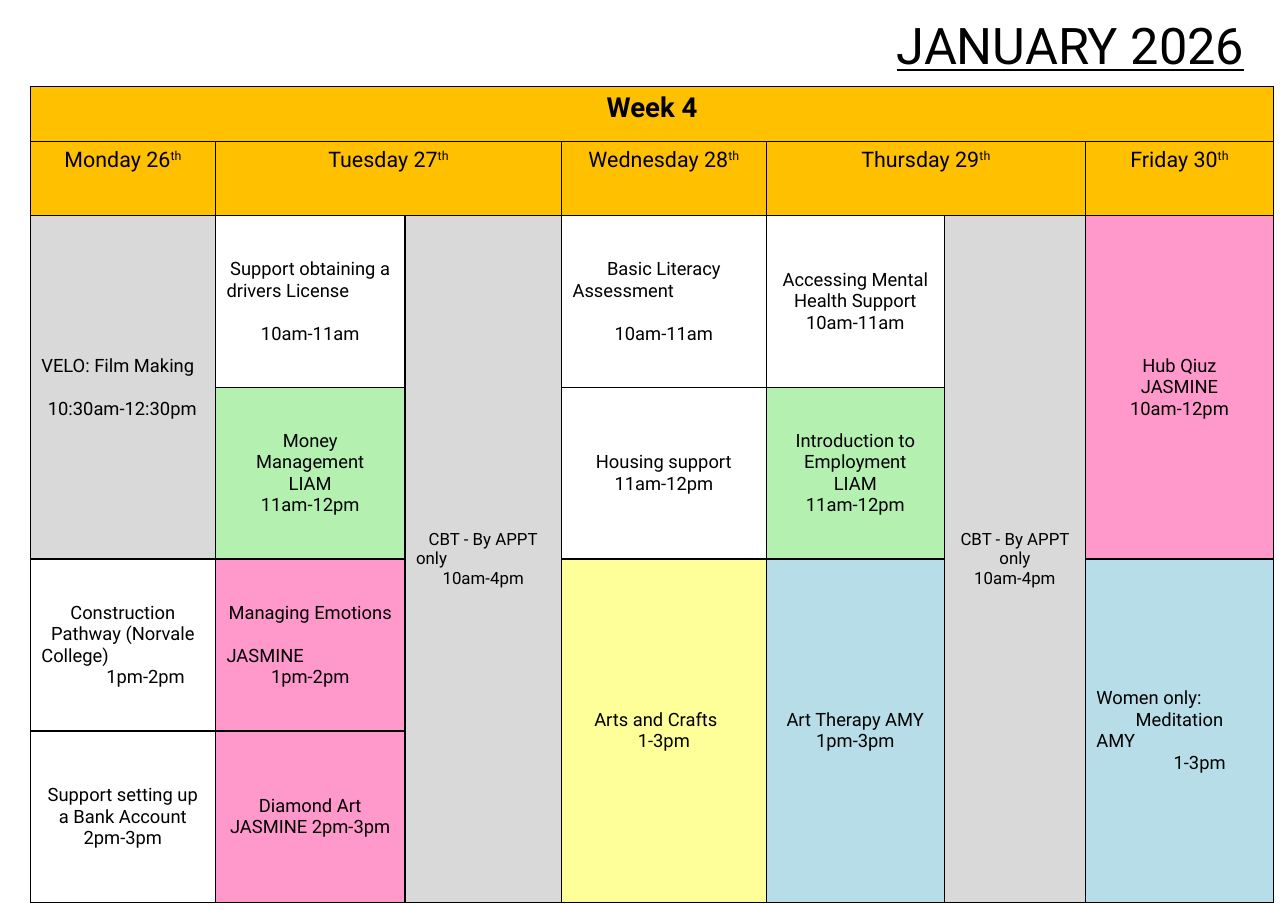
from pptx import Presentation
from pptx.dml.color import RGBColor
from pptx.enum.text import MSO_ANCHOR, PP_ALIGN
from pptx.oxml import parse_xml
from pptx.oxml.ns import nsdecls
from pptx.util import Cm, Pt

FONT = "Roboto"
BLACK, WHITE, GREY, AMBER = "000000", "FFFFFF", "D9D9D9", "FFC000"
PINK, GREEN, YELLOW, BLUE = "FF99CC", "B4F1B1", "FFFF99", "B7DEE8"
GAP = 14  # points, one line of text

COLS = [4.27, 4.37, 3.61, 4.72, 4.11, 3.25, 4.34]
ROWS = [1.27, 1.7] + [3.96] * 4

# First column, columns covered, day
DAYS = [(0, 1, "Monday 26"), (1, 2, "Tuesday 27"), (3, 1, "Wednesday 28"),
        (4, 2, "Thursday 29"), (6, 1, "Friday 30")]

# Row, column, rows covered, fill, size, lines
# A line is centred text, or (text, left indent in cm or None, space before)
SESSIONS = [
    (2, 0, 2, GREY, 12, [("VELO: Film Making", 0, 0),
                         ("10:30am-12:30pm", 0.15, GAP)]),
    (4, 0, 1, WHITE, 12, ["Construction", "Pathway (Norvale",
                          ("College)", 0, 0), ("1pm-2pm", 1.5, 0)]),
    (5, 0, 1, WHITE, 12, ["Support setting up a Bank Account 2pm-3pm"]),
    (2, 1, 1, WHITE, 12, ["Support obtaining a", ("drivers License", 0, 0),
                          ("10am-11am", None, GAP)]),
    (3, 1, 1, GREEN, 12, ["Money Management", "LIAM", "11am-12pm"]),
    (4, 1, 1, PINK, 12, ["Managing Emotions", ("JASMINE", 0, GAP), "1pm-2pm"]),
    (5, 1, 1, PINK, 12, ["Diamond Art", "JASMINE 2pm-3pm"]),
    (2, 2, 4, GREY, 11, ["CBT - By APPT", ("only", 0, 0), "10am-4pm"]),
    (2, 3, 1, WHITE, 12, ["Basic Literacy", ("Assessment", 0, 0),
                          ("10am-11am", None, GAP)]),
    (3, 3, 1, WHITE, 12, ["Housing support", "11am-12pm"]),
    (4, 3, 2, YELLOW, 12, [("Arts and Crafts", 0.5, 0), "1-3pm"]),
    (2, 4, 1, WHITE, 12, ["Accessing Mental Health Support", "10am-11am"]),
    (3, 4, 1, GREEN, 12, ["Introduction to Employment", "LIAM", "11am-12pm"]),
    (4, 4, 2, BLUE, 12, ["Art Therapy AMY", "1pm-3pm"]),
    (2, 5, 4, GREY, 11, ["CBT - By APPT only", "10am-4pm"]),
    (2, 6, 2, PINK, 12, ["Hub Qiuz", "JASMINE", "10am-12pm"]),
    (4, 6, 2, BLUE, 12, [("Women only:", 0, 0), "Meditation", ("AMY", 0, 0),
                         ("1-3pm", 1.78, 0)]),
]


def color(hex_value):
    return RGBColor.from_string(hex_value)


def style(r, size, bold=False, underline=False):
    r.font.name = FONT
    r.font.size = Pt(size)
    r.font.bold = bold
    r.font.underline = underline
    r.font.color.rgb = color(BLACK)


def add_borders(cell):
    tcPr = cell._tc.get_or_add_tcPr()
    for side in ("lnL", "lnR", "lnT", "lnB"):
        tcPr.append(parse_xml(
            f'<a:{side} {nsdecls("a")} w="12700"><a:solidFill>'
            f'<a:srgbClr val="{BLACK}"/></a:solidFill></a:{side}>'))


def fill_cell(cell, hex_value):
    cell.fill.solid()
    cell.fill.fore_color.rgb = color(hex_value)


def write_heading(cell, text, size, bold=False):
    fill_cell(cell, AMBER)
    p = cell.text_frame.paragraphs[0]
    p.text = text
    p.alignment = PP_ALIGN.CENTER
    style(p.runs[0], size, bold)
    return p


def write_session(cell, hex_value, size, lines):
    fill_cell(cell, hex_value)
    cell.vertical_anchor = MSO_ANCHOR.MIDDLE
    tf = cell.text_frame
    for i, line in enumerate(lines):
        text, indent, gap = (line, None, 0) if isinstance(line, str) else line
        p = tf.add_paragraph() if i else tf.paragraphs[0]
        p.text = text
        p.space_before = Pt(gap)
        p.alignment = PP_ALIGN.CENTER if indent is None else PP_ALIGN.LEFT
        if indent:
            p._p.get_or_add_pPr().set("marL", str(Cm(indent)))
        style(p.runs[0], size)


def add_title(s, left, top, width, height):
    tf = s.shapes.add_textbox(left, top, width, height).text_frame
    tf.margin_left = tf.margin_right = tf.margin_top = tf.margin_bottom = 0
    tf.word_wrap = True
    p = tf.paragraphs[0]
    p.text = "JANUARY 2026"
    p.line_spacing = Pt(49)
    style(p.runs[0], 33, underline=True)


def add_timetable(s, left, top, width, height):
    table = s.shapes.add_table(len(ROWS), len(COLS), left, top, width, height).table
    table.first_row = table.horz_banding = False
    for column, w in zip(table.columns, COLS):
        column.width = Cm(w)
    for row, h in zip(table.rows, ROWS):
        row.height = Cm(h)
    for cell in table.iter_cells():
        add_borders(cell)

    # Week and day headings
    week = table.cell(0, 0)
    week.merge(table.cell(0, len(COLS) - 1))
    write_heading(week, "Week 4", 18, bold=True)
    for col, span, day in DAYS:
        cell = table.cell(1, col)
        if span > 1:
            cell.merge(table.cell(1, col + span - 1))
        p = write_heading(cell, day, 14)
        r = p.add_run()
        r.text = "th"
        style(r, 14)
        r._r.get_or_add_rPr().set("baseline", "30000")

    # Sessions
    for row, col, span, hex_value, size, lines in SESSIONS:
        cell = table.cell(row, col)
        if span > 1:
            cell.merge(table.cell(row + span - 1, col))
        write_session(cell, hex_value, size, lines)


def main():
    prs = Presentation()
    prs.slide_width, prs.slide_height = Cm(29.7), Cm(20.98)
    s = prs.slides.add_slide(prs.slide_layouts[6])
    add_title(s, Cm(20.68), Cm(0), Cm(8.9), Cm(1.65))
    add_timetable(s, Cm(0.7), Cm(2), Cm(sum(COLS)), Cm(sum(ROWS)))
    prs.save("out.pptx")


if __name__ == "__main__":
    main()
